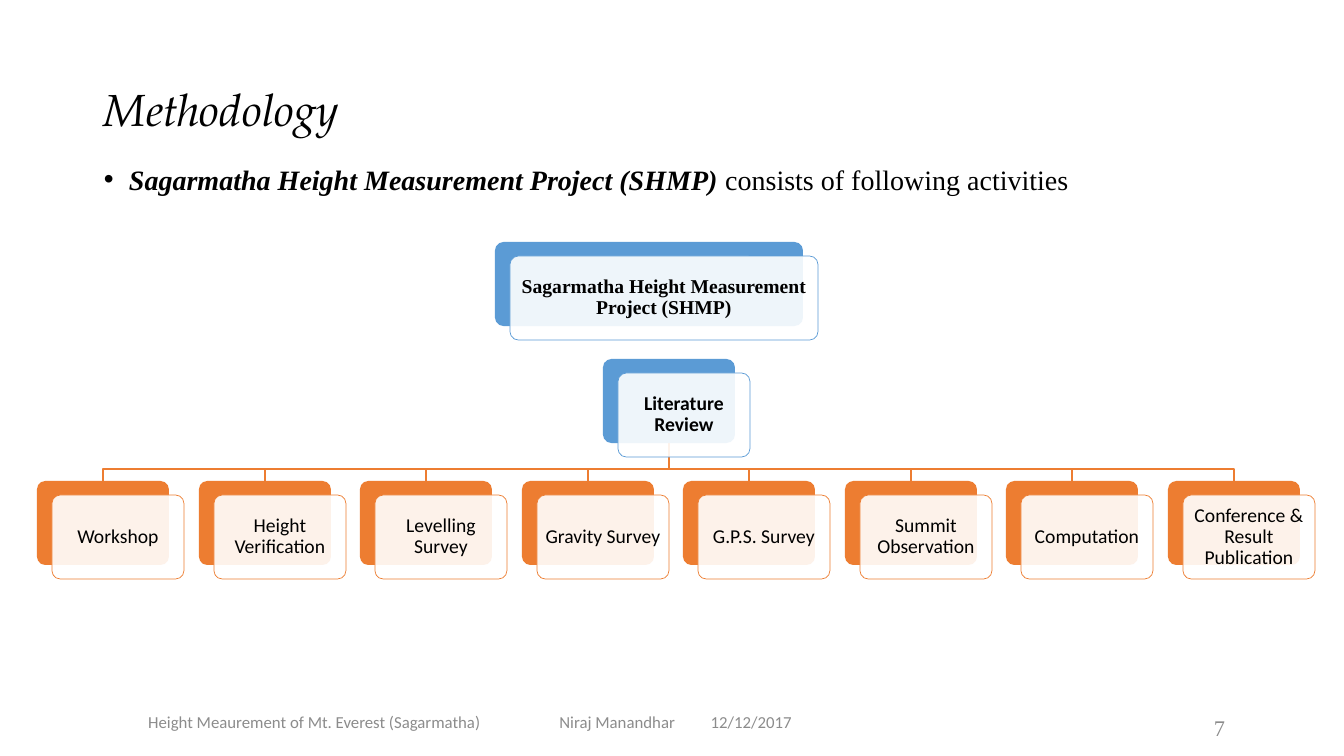
from dataclasses import dataclass

from lxml import etree
from pptx import Presentation
from pptx.dml.color import RGBColor
from pptx.enum.shapes import MSO_SHAPE
from pptx.enum.text import MSO_ANCHOR, PP_ALIGN
from pptx.oxml.ns import qn
from pptx.shapes.autoshape import Shape
from pptx.slide import Slide
from pptx.text.text import _Paragraph
from pptx.util import Pt

EMU_PER_PX = 914400 / 100.8
ROUNDED = MSO_SHAPE.ROUNDED_RECTANGLE
LEFT, CENTER, RIGHT = PP_ALIGN.LEFT, PP_ALIGN.CENTER, PP_ALIGN.RIGHT
TOP, MIDDLE = MSO_ANCHOR.TOP, MSO_ANCHOR.MIDDLE


@dataclass(frozen=True)
class Theme:
    black: RGBColor = RGBColor(0x00, 0x00, 0x00)
    white: RGBColor = RGBColor(0xFF, 0xFF, 0xFF)
    grey: RGBColor = RGBColor(0x8C, 0x8C, 0x8C)
    blue: RGBColor = RGBColor(0x5B, 0x9B, 0xD5)
    orange: RGBColor = RGBColor(0xED, 0x7D, 0x31)
    sans: str = "Calibri"
    serif: str = "Times New Roman"
    display: str = "TeX Gyre Pagella"
    title_size: int = 32
    body_size: int = 20
    number_size: int = 16
    node_size: int = 14
    footer_size: int = 12


THEME = Theme()


@dataclass(frozen=True)
class Box:
    left: int
    top: int
    width: int
    height: int

    def emu(self) -> tuple[int, int, int, int]:
        return px(self.left), px(self.top), px(self.width), px(self.height)


@dataclass(frozen=True)
class TextStyle:
    size: int
    font: str
    color: RGBColor = THEME.black
    bold: bool = False
    italic: bool = False
    align: PP_ALIGN = LEFT
    line_spacing: float = 1.0


@dataclass(frozen=True)
class Label:
    text: str
    box: Box
    style: TextStyle


@dataclass(frozen=True)
class Node:
    text: str
    box: Box
    color: RGBColor
    font: str = THEME.sans
    bold: bool = False


NODE_WIDTH, NODE_HEIGHT = 132, 84
FRONT_DX, FRONT_DY = 15, 14
ACTIVITY_LEFT, ACTIVITY_TOP, ACTIVITY_SPAN = 37, 481, 1131
BRANCH_Y = 469

ACTIVITIES = ["Workshop", "Height Verification", "Levelling Survey", "Gravity Survey",
              "G.P.S. Survey", "Summit Observation", "Computation",
              "Conference & Result Publication"]

PROJECT = Node("Sagarmatha Height Measurement Project (SHMP)",
               Box(495, 242, 308, NODE_HEIGHT), THEME.blue, THEME.serif, True)
REVIEW = Node("Literature Review", Box(603, 359, NODE_WIDTH, NODE_HEIGHT),
              THEME.blue, bold=True)
ACTIVITY_NODES = [
    Node(activity,
         Box(ACTIVITY_LEFT + round(i * ACTIVITY_SPAN / (len(ACTIVITIES) - 1)),
             ACTIVITY_TOP, NODE_WIDTH, NODE_HEIGHT),
         THEME.orange)
    for i, activity in enumerate(ACTIVITIES)
]

FOOTER = TextStyle(THEME.footer_size, THEME.sans, THEME.grey, align=CENTER)
LABELS = [
    Label("Height Meaurement of Mt. Everest (Sagarmatha)", Box(127, 702, 375, 40), FOOTER),
    Label("Niraj Manandhar \t12/12/2017", Box(488, 702, 375, 40), FOOTER),
    Label("Methodology", Box(94, 70, 1156, 85),
          TextStyle(THEME.title_size, THEME.display, italic=True, line_spacing=0.9)),
    Label("7", Box(1149, 708, 86, 40),
          TextStyle(THEME.number_size, THEME.serif, THEME.grey, align=RIGHT)),
]


def px(length: float) -> int:
    return round(length * EMU_PER_PX)


def style_paragraph(paragraph: _Paragraph, style: TextStyle) -> None:
    paragraph.alignment = style.align
    paragraph.line_spacing = style.line_spacing
    font = paragraph.font
    font.size = Pt(style.size)
    font.name = style.font
    font.color.rgb = style.color
    font.bold = style.bold
    font.italic = style.italic


def add_text_box(slide: Slide, box: Box, anchor: MSO_ANCHOR) -> _Paragraph:
    """Add a wrapping text box and return its first paragraph."""
    frame = slide.shapes.add_textbox(*box.emu()).text_frame
    frame.word_wrap = True
    frame.vertical_anchor = anchor
    return frame.paragraphs[0]


def add_label(slide: Slide, label: Label) -> None:
    paragraph = add_text_box(slide, label.box, MIDDLE)
    paragraph.add_run().text = label.text
    style_paragraph(paragraph, label.style)


def add_introduction(slide: Slide) -> None:
    introduction = add_text_box(slide, Box(94, 161, 1156, 57), TOP)
    project_name = introduction.add_run()
    project_name.text = "Sagarmatha Height Measurement Project (SHMP) "
    project_name.font.bold = project_name.font.italic = True
    introduction.add_run().text = "consists of following activities"
    properties = introduction._p.get_or_add_pPr()
    properties.set("marL", str(px(25)))
    properties.set("indent", str(-px(25)))
    etree.SubElement(properties, qn("a:buFont"), typeface="Arial")
    etree.SubElement(properties, qn("a:buChar"), char="•")
    style_paragraph(introduction, TextStyle(THEME.body_size, THEME.serif, line_spacing=0.9))


def add_branch(slide: Slide, parent: Box, child: Box) -> None:
    """Draw the bent line from the parent's bottom to the child's top."""
    start_x = parent.left + parent.width // 2
    end_x = child.left + child.width // 2
    builder = slide.shapes.build_freeform(start_x, parent.top + parent.height, EMU_PER_PX)
    builder.add_line_segments(
        [(start_x, BRANCH_Y), (end_x, BRANCH_Y), (end_x, child.top)], close=False)
    branch = builder.convert_to_shape()
    branch.shadow.inherit = False
    branch.fill.background()
    branch.line.color.rgb = THEME.orange
    branch.line.width = Pt(1)


def add_card(slide: Slide, box: Box, fill: RGBColor) -> Shape:
    card = slide.shapes.add_shape(ROUNDED, *box.emu())
    card.adjustments[0] = 0.1
    card.shadow.inherit = False
    card.fill.solid()
    card.fill.fore_color.rgb = fill
    card.line.fill.background()
    return card


def add_node(slide: Slide, node: Node) -> None:
    """Draw a coloured card with a translucent, labelled card in front."""
    back = node.box
    add_card(slide, back, node.color)
    front = add_card(slide, Box(back.left + FRONT_DX, back.top + FRONT_DY,
                                back.width, back.height), THEME.white)
    white = front._element.spPr.find(qn("a:solidFill")).find(qn("a:srgbClr"))
    etree.SubElement(white, qn("a:alpha"), val="90000")
    front.line.color.rgb = node.color
    front.line.width = Pt(0.5)
    frame = front.text_frame
    frame.word_wrap = True
    frame.vertical_anchor = MIDDLE
    frame.margin_left = frame.margin_right = frame.margin_top = frame.margin_bottom = px(5)
    paragraph = frame.paragraphs[0]
    paragraph.add_run().text = node.text
    style_paragraph(paragraph, TextStyle(THEME.node_size, node.font, bold=node.bold,
                                         align=CENTER, line_spacing=0.9))


def main() -> None:
    deck = Presentation()
    deck.slide_width, deck.slide_height = px(1344), px(756)
    slide = deck.slides.add_slide(deck.slide_layouts[6])
    for label in LABELS:
        add_label(slide, label)
    add_introduction(slide)
    for activity in ACTIVITY_NODES:
        add_branch(slide, REVIEW.box, activity.box)
    for node in [PROJECT, REVIEW, *ACTIVITY_NODES]:
        add_node(slide, node)
    deck.save("out.pptx")


if __name__ == "__main__":
    main()
